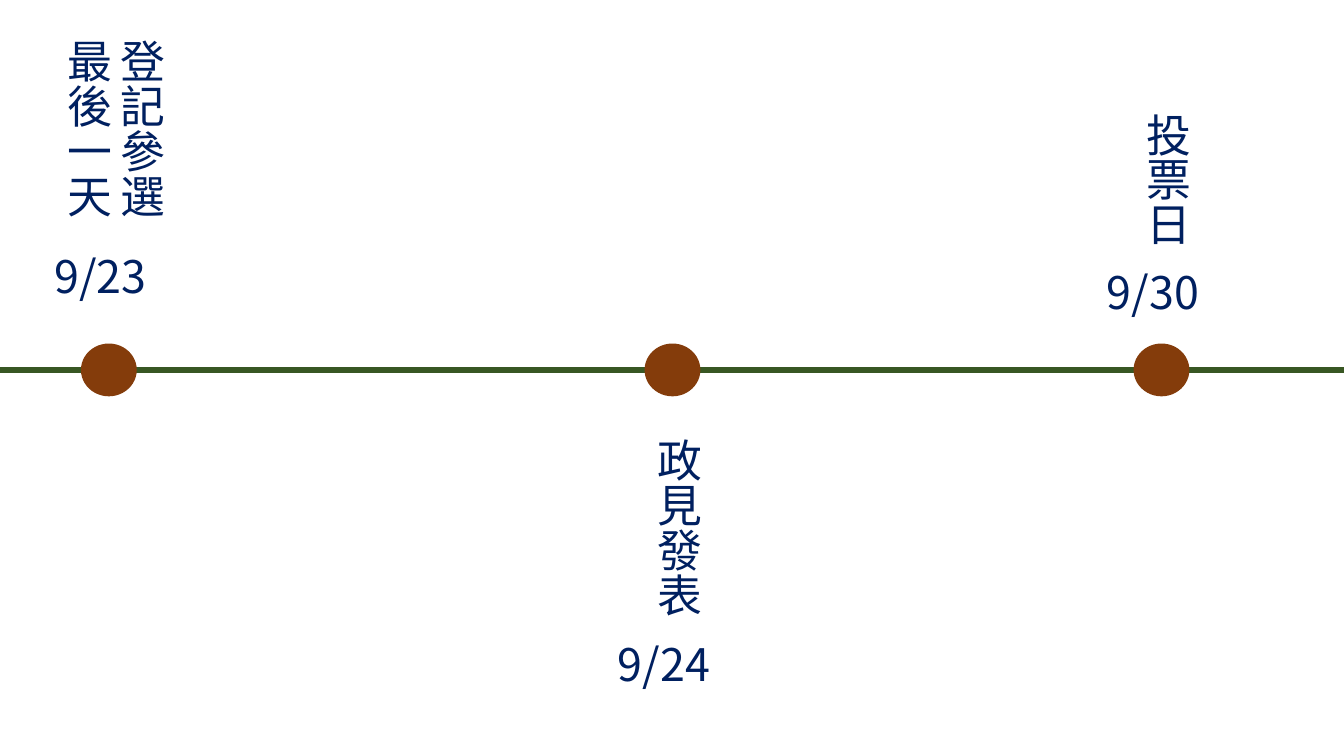
import pptx
import pptx.dml.color
import pptx.enum.shapes
import pptx.enum.text
import pptx.oxml.ns
import pptx.util
from lxml import etree

Inches = pptx.util.Inches
WIDTH, HEIGHT = 13.33, 7.5
AXIS_Y = 3.67
DOT_W, DOT_H = 0.54, 0.51
LABEL_H = 2.87
DATE_W, DATE_H = 1.28, 0.64

# centre x, label columns, label top, date, date top
MILESTONES = [
    (1.08, ["登記參選", "最後一天"], 0.29, "9/23", 2.42),
    (6.67, ["政見發表"], 4.25, "9/24", 6.27),
    (11.52, ["投票日"], 1.02, "9/30", 2.58),
]


class Timeline:
    FONT = "Noto Sans CJK SC"
    SIZE = 32
    COLORS = {"axis": "385723", "dot": "843C0B", "text": "002060"}

    def __init__(self, slide):
        self.slide = slide

    def color(self, name):
        return pptx.dml.color.RGBColor.from_string(self.COLORS[name])

    def axis(self, y):
        s = self.slide.shapes.add_connector(
            pptx.enum.shapes.MSO_CONNECTOR.STRAIGHT,
            Inches(0), Inches(y), Inches(WIDTH), Inches(y))
        s.line.color.rgb = self.color("axis")
        s.line.width = pptx.util.Pt(4.75)
        etree.SubElement(s._element.spPr, pptx.oxml.ns.qn("a:effectLst"))

    def dot(self, x, y):
        """Draw a milestone dot centred on x, y."""
        s = self.slide.shapes.add_shape(
            pptx.enum.shapes.MSO_SHAPE.OVAL,
            Inches(x - DOT_W / 2), Inches(y - DOT_H / 2), Inches(DOT_W), Inches(DOT_H))
        s.shadow.inherit = False
        s.fill.solid()
        s.fill.fore_color.rgb = self.color("dot")
        s.line.color.rgb = self.color("dot")
        s.line.width = pptx.util.Pt(1)

    def text(self, lines, x, top, width, height, vertical=False):
        """Add a text box centred on x, one paragraph per line."""
        s = self.slide.shapes.add_textbox(
            Inches(x - width / 2), Inches(top), Inches(width), Inches(height))
        tf = s.text_frame
        tf.word_wrap = True
        tf.auto_size = pptx.enum.text.MSO_AUTO_SIZE.SHAPE_TO_FIT_TEXT
        if vertical:
            tf._txBody.bodyPr.set("vert", "eaVert")
        for i, line in enumerate(lines):
            p = tf.add_paragraph() if i else tf.paragraphs[0]
            r = p.add_run()
            r.text = line
            r.font.name = self.FONT
            r.font.size = pptx.util.Pt(self.SIZE)
            r.font.color.rgb = self.color("text")
            ea = etree.SubElement(r.font._element, pptx.oxml.ns.qn("a:ea"))
            ea.set("typeface", self.FONT)


def main():
    prs = pptx.Presentation()
    prs.slide_width, prs.slide_height = Inches(WIDTH), Inches(HEIGHT)
    timeline = Timeline(prs.slides.add_slide(prs.slide_layouts[6]))
    timeline.axis(AXIS_Y)
    for x, label, label_top, date, date_top in MILESTONES:
        timeline.dot(x, AXIS_Y)
        label_w = 0.2 + 0.54 * len(label)
        timeline.text(label, x, label_top, label_w, LABEL_H, vertical=True)
        timeline.text([date], x, date_top, DATE_W, DATE_H)
    prs.save("out.pptx")


if __name__ == "__main__":
    main()
